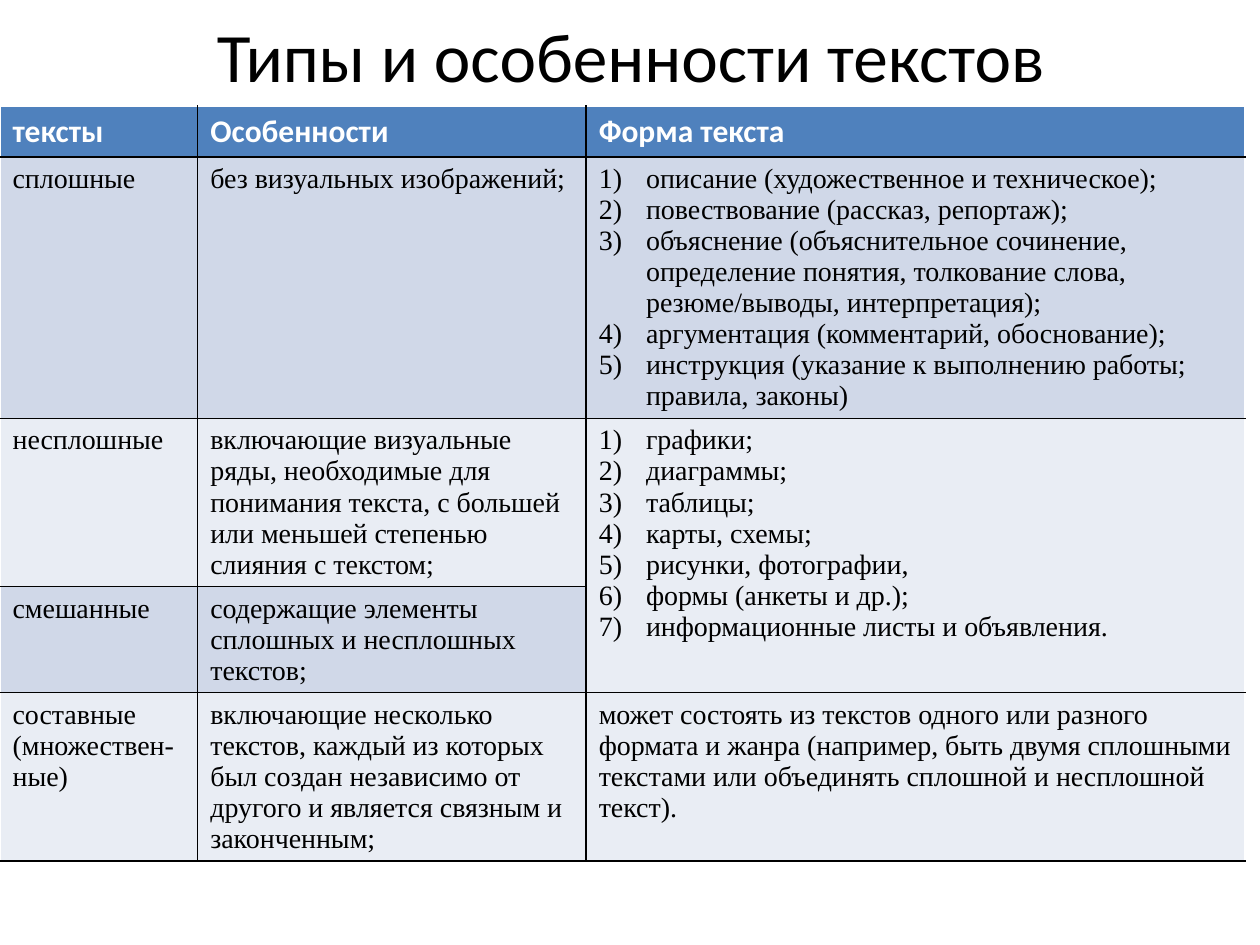
"""Build a slide with a table of text types and their features."""
from lxml import etree
from pptx import Presentation
from pptx.dml.color import RGBColor
from pptx.enum import text
from pptx.oxml import ns
from pptx.util import Pt

COLS = [113, 222, 376.5]
ROWS = [
    (29, "4F81BD", ["тексты", "Особенности", "Форма текста"]),
    (149.5, "D0D8E8", ["сплошные", "без визуальных изображений;", [
        "описание (художественное и техническое);",
        "повествование (рассказ, репортаж);",
        "объяснение (объяснительное сочинение, определение понятия, "
        "толкование слова, резюме/выводы, интерпретация);",
        "аргументация (комментарий, обоснование);",
        "инструкция (указание к выполнению работы; правила, законы)"]]),
    (96, "E9EDF4", [
        "несплошные",
        "включающие визуальные ряды, необходимые для понимания текста, "
        "с большей или меньшей степенью слияния с текстом;",
        ["графики;", "диаграммы;", "таблицы;", "карты, схемы;",
         "рисунки, фотографии,", "формы (анкеты и др.);",
         "информационные листы и объявления."]]),
    (60.5, "D0D8E8", ["смешанные",
                      "содержащие элементы сплошных и несплошных текстов;", None]),
    (96, "E9EDF4", [
        "составные (множествен-ные)",
        "включающие несколько текстов, каждый из которых был создан "
        "независимо от другого и является связным и законченным;",
        "может состоять из текстов одного или разного формата и жанра "
        "(например, быть двумя сплошными текстами или объединять сплошной "
        "и несплошной текст)."]),
]


def rgb(value):
    return RGBColor.from_string(value)


def write(p, value, font="Times New Roman", size=16, color="000000", bold=False):
    r = p.add_run()
    r.text = value
    r.font.name, r.font.size, r.font.bold = font, Pt(size), bold
    r.font.color.rgb = rgb(color)


def number(p, indent=27):
    pPr = p._p.get_or_add_pPr()
    pPr.set("marL", str(Pt(indent)))
    pPr.set("indent", str(-Pt(indent)))
    etree.SubElement(pPr, ns.qn("a:buAutoNum"), type="arabicParenR")


def border(cell, side, color, width=1):
    ln = etree.SubElement(cell._tc.get_or_add_tcPr(), ns.qn(f"a:ln{side}"),
                          w=str(Pt(width)))
    fill = etree.SubElement(ln, ns.qn("a:solidFill"))
    etree.SubElement(fill, ns.qn("a:srgbClr"), val=color)


class Builder:
    def __init__(self, prs):
        self.s = prs.slides.add_slide(prs.slide_layouts[5])
        self.line, self.edge = "000000", "FFFFFF"
        self.head = dict(font="Calibri", size=18, color="FFFFFF", bold=True)

    def title(self, value, x, y, w, h):
        sp = self.s.shapes.title
        sp.left, sp.top, sp.width, sp.height = Pt(x), Pt(y), Pt(w), Pt(h)
        tf = sp.text_frame
        tf.auto_size = text.MSO_AUTO_SIZE.NONE
        tf.vertical_anchor = text.MSO_ANCHOR.MIDDLE
        p = tf.paragraphs[0]
        p.alignment = text.PP_ALIGN.CENTER
        write(p, value, font="Calibri", size=39.6)

    def cell(self, cell, value, fill, sides, style):
        for side, color in sides.items():
            border(cell, side, color)
        cell.fill.solid()
        cell.fill.fore_color.rgb = rgb(fill)
        if value is None:
            return
        numbered = isinstance(value, list)
        tf = cell.text_frame
        for i, item in enumerate(value if numbered else [value]):
            p = tf.add_paragraph() if i else tf.paragraphs[0]
            if numbered:
                number(p)
            write(p, item, **style)

    def table(self, x, y, cols, rows):
        heights = [row[0] for row in rows]
        tbl = self.s.shapes.add_table(len(rows), len(cols), Pt(x), Pt(y),
                                      Pt(sum(cols)), Pt(sum(heights))).table
        for col, width in zip(tbl.columns, cols):
            col.width = Pt(width)
        for i, (height, fill, values) in enumerate(rows):
            tbl.rows[i].height = Pt(height)
            for j, value in enumerate(values):
                sides = {"L": self.line if j else self.edge,
                         "R": self.line if j < len(cols) - 1 else self.edge,
                         "T": self.line if i else self.edge,
                         "B": self.line}
                self.cell(tbl.cell(i, j), value, fill, sides,
                          {} if i else self.head)
        return tbl


def main():
    prs = Presentation()
    prs.slide_width, prs.slide_height = Pt(720), Pt(540)
    b = Builder(prs)
    b.title("Типы и особенности текстов", 36.5, 9.5, 648, 44)
    tbl = b.table(0, 60.5, COLS, ROWS)
    tbl.cell(2, 2).merge(tbl.cell(3, 2))
    prs.save("out.pptx")


if __name__ == "__main__":
    main()
